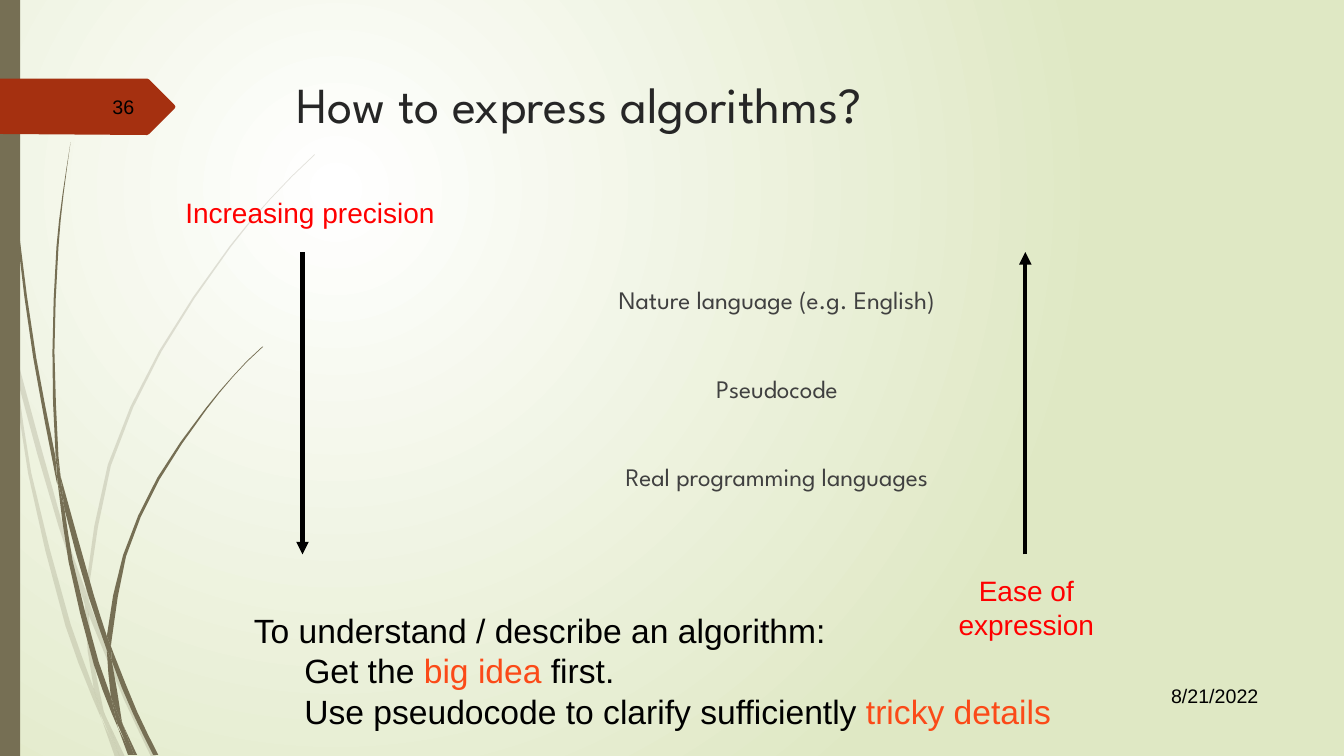
import math
from dataclasses import dataclass

import pptx
import pptx.dml.color
import pptx.enum.shapes
import pptx.enum.text
import pptx.oxml
import pptx.oxml.ns
import pptx.util

ALIGN = pptx.enum.text.PP_ALIGN
ANCHOR = pptx.enum.text.MSO_ANCHOR
EMU_PER_PX = 9144  # 100 px to the inch
Point = tuple[float, float]


@dataclass(frozen=True)
class Theme:
    sans: str = "Arial"
    display: str = "League Spartan"
    glow: str = "FFFFFF"
    meadow: str = "DFE8C4"
    grass: str = "766F54"
    badge: str = "A53010"
    title: str = "262626"
    body: str = "404040"
    ink: str = "000000"
    label: str = "FF0000"
    accent: str = "FB4A18"
    title_size: int = 36
    note_size: int = 24
    label_size: int = 20
    body_size: int = 18
    footer_size: int = 14


THEME = Theme()


@dataclass(frozen=True)
class Blade:
    left: list[Point]
    right: list[Point]


@dataclass(frozen=True)
class Span:
    text: str
    size: int
    color: str = THEME.ink
    font: str = THEME.sans


@dataclass(frozen=True)
class Para:
    spans: list[Span]
    indent: int = 0
    before: float = 0


@dataclass(frozen=True)
class Box:
    at: tuple[int, int, int, int]
    paras: list[Para]
    align: ALIGN = ALIGN.LEFT
    anchor: ANCHOR = ANCHOR.TOP
    side_inset: int = 10
    top_inset: int = 5


@dataclass(frozen=True)
class Arrow:
    start: tuple[int, int]
    end: tuple[int, int]


PALE_BLADES = [
    Blade([(0, 299), (10, 344), (11, 350)], [(0, 282), (9, 322), (11, 350)]),
    Blade([(14, 345), (17, 376), (58, 522), (84, 599)], [(14, 345), (62, 520), (85, 586)]),
    Blade([(88, 610), (123, 694), (150, 751)], [(88, 596), (92, 607), (127, 692), (155, 751)]),
    Blade([(105, 711), (119, 751)], [(105, 711), (124, 751)]),
    Blade([(11, 350), (28, 470), (65, 621), (92, 693), (101, 714)],
          [(11, 350), (17, 376), (31, 469), (70, 619), (93, 683), (99, 707)]),
    Blade([(84, 599), (87, 646), (93, 683), (96, 692), (105, 711)],
          [(84, 599), (88, 608), (91, 646), (103, 706)]),
    Blade([(312, 153), (289, 175), (268, 197), (228, 244), (158, 348), (107, 461), (85, 584), (88, 596)],
          [(312, 154), (290, 175), (268, 198), (229, 245), (160, 349), (110, 462), (88, 584)]),
    Blade([(101, 714), (114, 751)], [(101, 714), (119, 751)]),
    Blade([(85, 586), (84, 599), (88, 608)], [(85, 586), (88, 596), (88, 610)]),
    Blade([(93, 683), (99, 707), (119, 751)], [(93, 683), (96, 692), (105, 711)]),
]
DARK_BLADES = [
    Blade([(3, 0), (4, 48), (7, 110), (17, 233), (33, 355), (56, 477), (57, 481)],
          [(4, 0), (5, 48), (8, 109), (19, 232), (36, 355), (55, 453)]),
    Blade([(60, 472), (64, 505), (88, 592), (106, 645)], [(60, 472), (93, 590), (106, 631)]),
    Blade([(110, 641), (111, 656), (132, 708), (152, 749)], [(110, 641), (113, 649), (136, 706), (157, 749)]),
    Blade([(57, 477), (68, 557), (93, 659), (111, 708), (117, 722)],
          [(57, 477), (64, 505), (72, 556), (98, 657), (110, 691), (116, 717)]),
    Blade([(70, 141), (62, 193), (56, 245), (52, 349), (55, 449), (60, 472)],
          [(70, 141), (63, 193), (58, 245), (54, 349), (58, 453)]),
    Blade([(122, 719), (133, 749)], [(122, 719), (136, 749)]),
    Blade([(55, 449), (57, 477), (64, 505)], [(55, 449), (60, 472)]),
    Blade([(260, 344), (245, 358), (231, 373), (204, 405), (156, 474), (122, 551), (106, 631), (110, 641)],
          [(261, 344), (245, 359), (231, 374), (205, 406), (158, 476), (125, 552), (111, 633)]),
    Blade([(117, 722), (127, 749)], [(117, 722), (131, 749)]),
    Blade([(106, 645), (110, 691), (116, 706), (122, 719)], [(106, 645), (111, 656), (121, 716)]),
    Blade([(106, 631), (106, 645), (111, 656)], [(106, 631), (110, 641)]),
    Blade([(110, 691), (116, 717), (130, 749)], [(110, 691), (116, 706), (122, 719), (133, 749)]),
]
SIDE_BAR = (0, 0, 20, 750)
BADGE = [(0, 78), (146, 78), (148, 79), (173, 104), (174, 106), (173, 108), (148, 133), (146, 134), (0, 133)]
LEVELS = ["Nature language (e.g. English)", "Pseudocode", "Real programming languages"]
LEVEL_GAP = 41.8


def note(text: str, color: str = THEME.ink) -> Span:
    return Span(text, THEME.note_size, color)


BOXES = [
    Box((1133, 670, 125, 41), [Para([Span("8/21/2022", THEME.footer_size)])], ALIGN.RIGHT, ANCHOR.MIDDLE),
    Box((58, 86, 85, 40), [Para([Span("36", THEME.footer_size)])], ALIGN.RIGHT, ANCHOR.MIDDLE),
    Box((284, 68, 975, 140),
        [Para([Span("How to express algorithms?", THEME.title_size, THEME.title, THEME.display)])]),
    Box((283, 233, 975, 413),
        [Para([Span(level, THEME.body_size, THEME.body, THEME.display)], before=LEVEL_GAP if row else 0)
         for row, level in enumerate(LEVELS)], ALIGN.CENTER, top_inset=49),
    Box((174, 189, 267, 43),
        [Para([Span("Increasing precision", THEME.label_size, THEME.label)])], ALIGN.CENTER, side_inset=0),
    Box((890, 564, 256, 43),
        [Para([Span("Ease of expression", THEME.label_size, THEME.label)])], ALIGN.CENTER, side_inset=40),
    Box((242, 600, 883, 131), [
        Para([note("To understand / describe an algorithm:")]),
        Para([note("Get the "), note("big idea", THEME.accent), note(" first.")], indent=50),
        Para([note("Use pseudocode to clarify sufficiently "), note("tricky details", THEME.accent)], indent=50)]),
]
ARROWS = [Arrow((300, 250), (300, 550)), Arrow((1017, 550), (1017, 250))]


def px(length: float) -> pptx.util.Emu:
    return pptx.util.Emu(round(length * EMU_PER_PX))


def rgb(color: str) -> pptx.dml.color.RGBColor:
    return pptx.dml.color.RGBColor.from_string(color)


def heading(a: Point, b: Point) -> Point:
    length = math.dist(a, b) or 1
    return (b[0] - a[0]) / length, (b[1] - a[1]) / length


def bend(points: list[Point]) -> list[Point]:
    """Add a bowed midpoint to each long span."""
    curve: list[Point] = []
    padded = [points[0], *points, points[-1]]
    for a, b, c, d in zip(padded, padded[1:], padded[2:], padded[3:]):
        curve.append(b)
        span = math.dist(b, c)
        if span > 40:
            curve.append(tuple((b[i] + c[i]) / 2 + span / 8 * (heading(a, c)[i] - heading(b, d)[i])
                               for i in (0, 1)))
    return [*curve, points[-1]]


def paint(shape, color: str, opacity: int = 100) -> None:
    shape.shadow.inherit = False
    shape.fill.solid()
    shape.fill.fore_color.rgb = rgb(color)
    shape.line.fill.background()
    if opacity < 100:
        shape.element.spPr.find(".//" + pptx.oxml.ns.qn("a:srgbClr")).append(pptx.oxml.parse_xml(
            f'<a:alpha {pptx.oxml.ns.nsdecls("a")} val="{opacity * 1000}"/>'))


def paint_background(page) -> None:
    fill = page.background.fill
    fill.gradient()
    for stop, color in zip(fill.gradient_stops, (THEME.glow, THEME.meadow)):
        stop.color.rgb = rgb(color)
    gradient = page.element.find(".//" + pptx.oxml.ns.qn("a:gradFill"))
    gradient.remove(gradient.find(pptx.oxml.ns.qn("a:lin")))
    gradient.append(pptx.oxml.parse_xml(
        f'<a:path {pptx.oxml.ns.nsdecls("a")} path="circle">'
        '<a:fillToRect l="50000" t="50000" r="100000" b="100000"/></a:path>'))


def draw_outline(page, points: list[Point], color: str, opacity: int = 100) -> None:
    corners = [(px(x), px(y)) for x, y in points]
    builder = page.shapes.build_freeform(*corners[0])
    builder.add_line_segments(corners[1:], close=True)
    paint(builder.convert_to_shape(), color, opacity)


def draw_arrow(page, arrow: Arrow) -> None:
    line = page.shapes.add_connector(pptx.enum.shapes.MSO_CONNECTOR.STRAIGHT, *map(px, arrow.start + arrow.end))
    line.line.color.rgb = rgb(THEME.ink)
    line.line.width = pptx.util.Pt(3)
    namespace = pptx.oxml.ns.nsdecls("a")
    line.line._get_or_add_ln().append(pptx.oxml.parse_xml(f'<a:tailEnd {namespace} type="triangle"/>'))
    line.element.spPr.append(pptx.oxml.parse_xml(f"<a:effectLst {namespace}/>"))


def draw_box(page, box: Box) -> None:
    frame = page.shapes.add_textbox(*map(px, box.at)).text_frame
    frame.word_wrap = True
    frame.vertical_anchor = box.anchor
    frame.margin_left = frame.margin_right = px(box.side_inset)
    frame.margin_top, frame.margin_bottom = px(box.top_inset), px(5)
    for row, para in enumerate(box.paras):
        target = frame.add_paragraph() if row else frame.paragraphs[0]
        target.alignment = box.align
        target.space_before = pptx.util.Pt(para.before)
        if para.indent:
            target._p.get_or_add_pPr().set("marL", str(px(para.indent)))
        for span in para.spans:
            run = target.add_run()
            run.text = span.text
            run.font.name, run.font.size = span.font, pptx.util.Pt(span.size)
            run.font.color.rgb = rgb(span.color)


def main() -> None:
    deck = pptx.Presentation()
    deck.slide_width, deck.slide_height = px(1333), px(750)
    page = deck.slides.add_slide(deck.slide_layouts[6])
    # Backdrop: grass, side bar and number badge
    paint_background(page)
    for blades, opacity in ((PALE_BLADES, 20), (DARK_BLADES, 100)):
        for blade in blades:
            draw_outline(page, bend(blade.left) + bend(blade.right)[::-1], THEME.grass, opacity)
    paint(page.shapes.add_shape(pptx.enum.shapes.MSO_SHAPE.RECTANGLE, *map(px, SIDE_BAR)), THEME.grass)
    draw_outline(page, BADGE, THEME.badge)
    # Content
    for box in BOXES:
        draw_box(page, box)
    for arrow in ARROWS:
        draw_arrow(page, arrow)
    deck.save("out.pptx")


if __name__ == "__main__":
    main()
